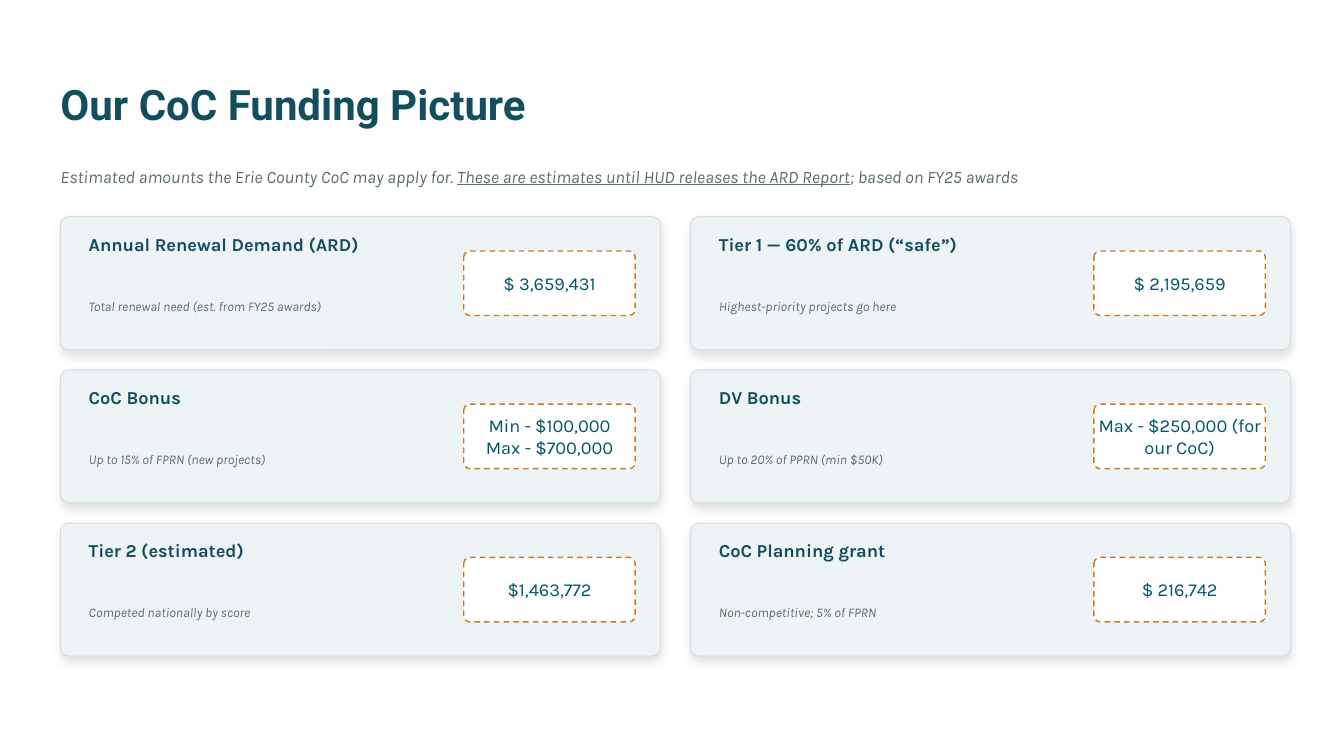
from lxml import etree
from pptx import Presentation
from pptx.dml.color import RGBColor
from pptx.enum.dml import MSO_LINE
from pptx.enum.shapes import MSO_SHAPE
from pptx.enum.text import MSO_ANCHOR, PP_ALIGN
from pptx.oxml.ns import qn
from pptx.util import Inches, Pt

ROUNDED = MSO_SHAPE.ROUNDED_RECTANGLE
DASH = MSO_LINE.DASH
TOP, MIDDLE = MSO_ANCHOR.TOP, MSO_ANCHOR.MIDDLE
LEFT, CENTER = PP_ALIGN.LEFT, PP_ALIGN.CENTER

COLORS = {
    "title": "134E5E", "muted": "5A6B70", "amount": "005469",
    "card": "EEF4F5", "card_line": "D5DEE0",
    "white": "FFFFFF", "accent": "C97B1E", "shadow": "000000",
}
MARGIN, CONTENT_W = 0.6, 12.1
GRID_TOP, COLUMNS = 2.15, 2
CARD_W, CARD_H = 5.95, 1.32
GAP_X, GAP_Y = 0.3, 0.2

CARDS = [
    ("Annual Renewal Demand (ARD)", "Total renewal need (est. from FY25 awards)", ["$ 3,659,431"]),
    ("Tier 1 — 60% of ARD (“safe”)", "Highest-priority projects go here", ["$ 2,195,659"]),
    ("CoC Bonus", "Up to 15% of FPRN (new projects)", ["Min - $100,000", "Max - $700,000"]),
    ("DV Bonus", "Up to 20% of PPRN (min $50K)", ["Max - $250,000 (for our CoC)"]),
    ("Tier 2 (estimated)", "Competed nationally by score", ["$1,463,772"]),
    ("CoC Planning grant", "Non-competitive; 5% of FPRN", ["$ 216,742"]),
]


def rgb(name):
    """Return the named palette colour."""
    return RGBColor.from_string(COLORS[name])


def write(shape, paragraphs, size, color, font="Karla", bold=False, italic=False,
          align=LEFT, anchor=TOP, spacing=None):
    """Fill a shape with paragraphs, each a list of (text, underlined) runs."""
    tf = shape.text_frame
    tf.word_wrap = True
    tf.vertical_anchor = anchor
    tf.margin_left = tf.margin_top = tf.margin_right = tf.margin_bottom = 0
    for i, runs in enumerate(paragraphs):
        p = tf.add_paragraph() if i else tf.paragraphs[0]
        p.alignment = align
        p.space_before = Pt(0)
        p.line_spacing = spacing
        p.font.name, p.font.size = font, Pt(size)
        p.font.bold, p.font.italic = bold, italic
        p.font.color.rgb = rgb(color)
        for text, underlined in runs:
            r = p.add_run()
            r.text = text
            if underlined:
                r.font.underline = True


def add_text(s, x, y, w, h, paragraphs, size, color, **style):
    """Add a text box at the given place in inches."""
    box = s.shapes.add_textbox(Inches(x), Inches(y), Inches(w), Inches(h))
    write(box, paragraphs, size, color, **style)


def add_panel(s, x, y, w, h, radius, fill, line, width):
    """Add a flat rounded panel with an outline."""
    sp = s.shapes.add_shape(ROUNDED, Inches(x), Inches(y), Inches(w), Inches(h))
    sp.adjustments[0] = radius / h
    sp.fill.solid()
    sp.fill.fore_color.rgb = rgb(fill)
    sp.line.color.rgb = rgb(line)
    sp.line.width = Pt(width)
    sp.shadow.inherit = False
    return sp


def add_soft_shadow(sp):
    """Give a panel a faint shadow falling straight down."""
    effects = sp.element.spPr.find(qn("a:effectLst"))
    shadow = etree.SubElement(effects, qn("a:outerShdw"), blurRad=str(Pt(7)),
                              dist=str(Pt(3)), dir="5400000", algn="t", rotWithShape="0")
    color = etree.SubElement(shadow, qn("a:srgbClr"), val=COLORS["shadow"])
    etree.SubElement(color, qn("a:alpha"), val="12000")


def add_header(s, x, y, w):
    """Place the title and the explanatory line below it."""
    title = s.shapes.title
    title.left, title.top = Inches(x), Inches(y)
    title.width, title.height = Inches(w), Inches(0.66)
    write(title, [[("Our CoC Funding Picture", False)]], 30, "title",
          font="Roboto", bold=True, anchor=MIDDLE)
    add_text(s, x, y + 0.85, w, 0.4, [[
        ("Estimated amounts the Erie County CoC may apply for. ", False),
        ("These are estimates until HUD releases the ARD Report", True),
        ("; based on FY25 awards", False),
    ]], 12.5, "muted", italic=True, anchor=MIDDLE)


def add_card(s, x, y, w, h, heading, note, amounts):
    """Draw one funding card with its dashed amount box."""
    add_soft_shadow(add_panel(s, x, y, w, h, 0.08, "card", "card_line", 0.75))
    text_x, text_w = x + 0.28, 3.55
    add_text(s, text_x, y + 0.18, text_w, 0.6, [[(heading, False)]], 13, "title",
             bold=True, spacing=0.95)
    add_text(s, text_x, y + 0.82, text_w, 0.42, [[(note, False)]], 9.5, "muted",
             italic=True, spacing=0.92)
    box_w, box_h = 1.7, 0.64
    box = add_panel(s, x + w - box_w - 0.25, y + (h - box_h) / 2, box_w, box_h,
                    0.06, "white", "accent", 1)
    box.line.dash_style = DASH
    write(box, [[(amount, False)] for amount in amounts], 13, "amount",
          align=CENTER, anchor=MIDDLE)


def add_funding_slide(prs):
    """Build the funding slide from its header and card grid."""
    s = prs.slides.add_slide(prs.slide_layouts[5])
    add_header(s, MARGIN, 0.7, CONTENT_W)
    for i, card in enumerate(CARDS):
        row, col = divmod(i, COLUMNS)
        add_card(s, MARGIN + col * (CARD_W + GAP_X), GRID_TOP + row * (CARD_H + GAP_Y),
                 CARD_W, CARD_H, *card)


def main():
    """Create and save the presentation."""
    prs = Presentation()
    prs.slide_width, prs.slide_height = Inches(13.33), Inches(7.5)
    add_funding_slide(prs)
    prs.save("out.pptx")


if __name__ == "__main__":
    main()
